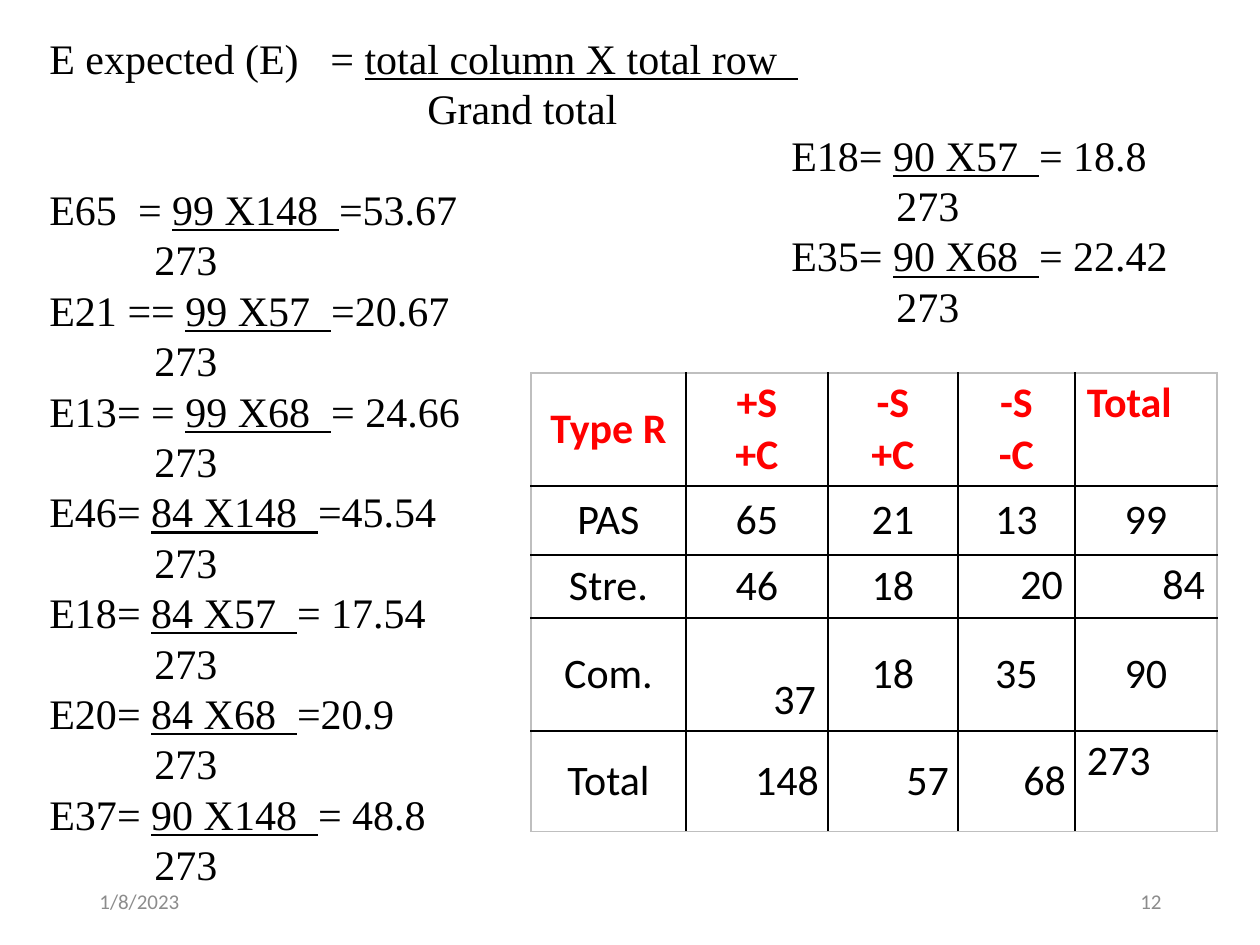
import pptx
import pptx.util
import pptx.dml.color
import pptx.enum.text
import pptx.oxml
import pptx.oxml.ns

PX = 914400 // 126
BLACK = pptx.dml.color.RGBColor(0x00, 0x00, 0x00)
RED = pptx.dml.color.RGBColor(0xFF, 0x00, 0x00)
GREY = pptx.dml.color.RGBColor(0x8C, 0x8C, 0x8C)
EDGE_GREY = pptx.dml.color.RGBColor(0xBF, 0xBF, 0xBF)

ALIGN = pptx.enum.text.PP_ALIGN
ANCHOR = pptx.enum.text.MSO_ANCHOR

FORMULA = ("E expected (E)\t= ", "total column X total row  ", "", "Grand total")
LEFT_RESULTS = [
    ("E65  = ", "99 X148  ", "=53.67", "273"),
    ("E21 == ", "99 X57  ", "=20.67", "273"),
    ("E13= = ", "99 X68  ", "= 24.66", "273"),
    ("E46= ", "84 X148  ", "=45.54", "273"),
    ("E18= ", "84 X57  ", "= 17.54", "273"),
    ("E20= ", "84 X68  ", "=20.9", "273"),
    ("E37= ", "90 X148  ", "= 48.8", "273"),
]
RIGHT_RESULTS = [
    ("E18= ", "90 X57  ", "= 18.8", "273"),
    ("E35= ", "90 X68  ", "= 22.42", "273"),
]
ROWS = [
    ["Type R", "+S\n+C", "-S\n+C", "-S\n-C", "Total"],
    ["PAS", "65", "21", "13", "99"],
    ["Stre.", "46", "18", "20", "84"],
    ["Com.", "37", "18", "35", "90"],
    ["Total", "148", "57", "68", "273"],
]
COL_WIDTHS = [155, 142, 130, 117, 142]
ROW_HEIGHTS = [113, 69, 63, 113, 101]
# Cells with full margins; the others are centred with tight margins.
LOOSE_CELLS = {
    (0, 1): (ALIGN.CENTER, ANCHOR.TOP),
    (0, 2): (ALIGN.CENTER, ANCHOR.TOP),
    (0, 3): (ALIGN.CENTER, ANCHOR.TOP),
    (0, 4): (ALIGN.LEFT, ANCHOR.TOP),
    (2, 3): (ALIGN.RIGHT, ANCHOR.TOP),
    (2, 4): (ALIGN.RIGHT, ANCHOR.TOP),
    (3, 1): (ALIGN.RIGHT, ANCHOR.BOTTOM),
    (4, 4): (ALIGN.LEFT, ANCHOR.TOP),
}
RIGHT_TIGHT_CELLS = {(4, 1), (4, 2), (4, 3)}


def px(n):
    return pptx.util.Emu(n * PX)


def set_font(font, name, size, color, bold=False):
    font.name = name
    font.size = pptx.util.Pt(size)
    font.color.rgb = color
    font.bold = bold


def add_text_frame(slide, left, top, width, height):
    tf = slide.shapes.add_textbox(px(left), px(top), px(width), px(height)).text_frame
    tf.word_wrap = True
    return tf


def add_line(tf, first):
    p = tf.paragraphs[0] if first else tf.add_paragraph()
    p.line_spacing = pptx.util.Pt(28.8)
    return p


def add_fraction(tf, fraction, indent=105, first=False, gap=0):
    """Write an underlined numerator line and an indented denominator line."""
    label, numerator, result, denominator = fraction
    top = add_line(tf, first)
    if gap:
        top.space_before = pptx.util.Pt(gap)
    if "\t" in label:
        top._p.get_or_add_pPr().append(pptx.oxml.parse_xml(
            f'<a:tabLst {pptx.oxml.ns.nsdecls("a")}>'
            f'<a:tab pos="{px(281)}" algn="l"/></a:tabLst>'))
    for text, underlined in ((label, False), (numerator, True), (result, False)):
        if text:
            r = top.add_run()
            r.text = text
            r.font.underline = underlined
    bottom = add_line(tf, False)
    bottom.text = denominator
    bottom._p.get_or_add_pPr().set("marL", str(px(indent)))
    bottom._p.get_or_add_pPr().set("indent", "0")
    for p in (top, bottom):
        set_font(p.font, "Times New Roman", 24, BLACK)


def add_footer(slide, left, text, align):
    tf = add_text_frame(slide, left, 876, 284, 50)
    tf.vertical_anchor = ANCHOR.MIDDLE
    p = tf.paragraphs[0]
    p.text = text
    p.alignment = align
    set_font(p.font, "Calibri", 12, GREY)


def set_borders(cell, row, col):
    """Draw grey lines on the table's outer edge and black lines inside."""
    tc_pr = cell._tc.get_or_add_tcPr()
    outer = {"L": col == 0, "R": col == len(COL_WIDTHS) - 1,
             "T": row == 0, "B": row == len(ROW_HEIGHTS) - 1}
    for i, (side, is_outer) in enumerate(outer.items()):
        color = EDGE_GREY if is_outer else BLACK
        tc_pr.insert(i, pptx.oxml.parse_xml(
            f'<a:ln{side} {pptx.oxml.ns.nsdecls("a")} w="12700"><a:solidFill>'
            f'<a:srgbClr val="{color}"/></a:solidFill></a:ln{side}>'))


def fill_cell(cell, row, col, text):
    loose = (row, col) in LOOSE_CELLS
    tight_align = ALIGN.RIGHT if (row, col) in RIGHT_TIGHT_CELLS else ALIGN.CENTER
    align, anchor = LOOSE_CELLS.get((row, col), (tight_align, ANCHOR.MIDDLE))
    cell.text = text
    cell.vertical_anchor = anchor
    cell.margin_left = cell.margin_right = px(12 if loose else 9)
    cell.margin_top = cell.margin_bottom = px(5 if loose else 0)
    cell.fill.background()
    for p in cell.text_frame.paragraphs:
        p.alignment = align
        set_font(p.font, "Calibri", 24, BLACK if row else RED, bold=row == 0)
    set_borders(cell, row, col)


def add_counts_table(slide, left, top):
    table = slide.shapes.add_table(
        len(ROW_HEIGHTS), len(COL_WIDTHS), px(left), px(top),
        px(sum(COL_WIDTHS)), px(sum(ROW_HEIGHTS))).table
    table.first_row = table.horz_banding = False
    for column, width in zip(table.columns, COL_WIDTHS):
        column.width = px(width)
    for table_row, height in zip(table.rows, ROW_HEIGHTS):
        table_row.height = px(height)
    for row, texts in enumerate(ROWS):
        for col, text in enumerate(texts):
            fill_cell(table.cell(row, col), row, col, text)


def main():
    prs = pptx.Presentation()
    prs.slide_width, prs.slide_height = px(1260), px(945)
    slide = prs.slides.add_slide(prs.slide_layouts[6])

    add_footer(slide, 87, "1/8/2023", ALIGN.LEFT)
    add_footer(slide, 890, "12", ALIGN.RIGHT)

    tf = add_text_frame(slide, 37, 26, 781, 878)
    add_fraction(tf, FORMULA, indent=378, first=True)
    for i, fraction in enumerate(LEFT_RESULTS):
        add_fraction(tf, fraction, gap=0 if i else 28.8)

    tf = add_text_frame(slide, 779, 123, 630, 217)
    for i, fraction in enumerate(RIGHT_RESULTS):
        add_fraction(tf, fraction, first=i == 0)

    add_counts_table(slide, 531, 373)
    prs.save("out.pptx")


if __name__ == "__main__":
    main()
